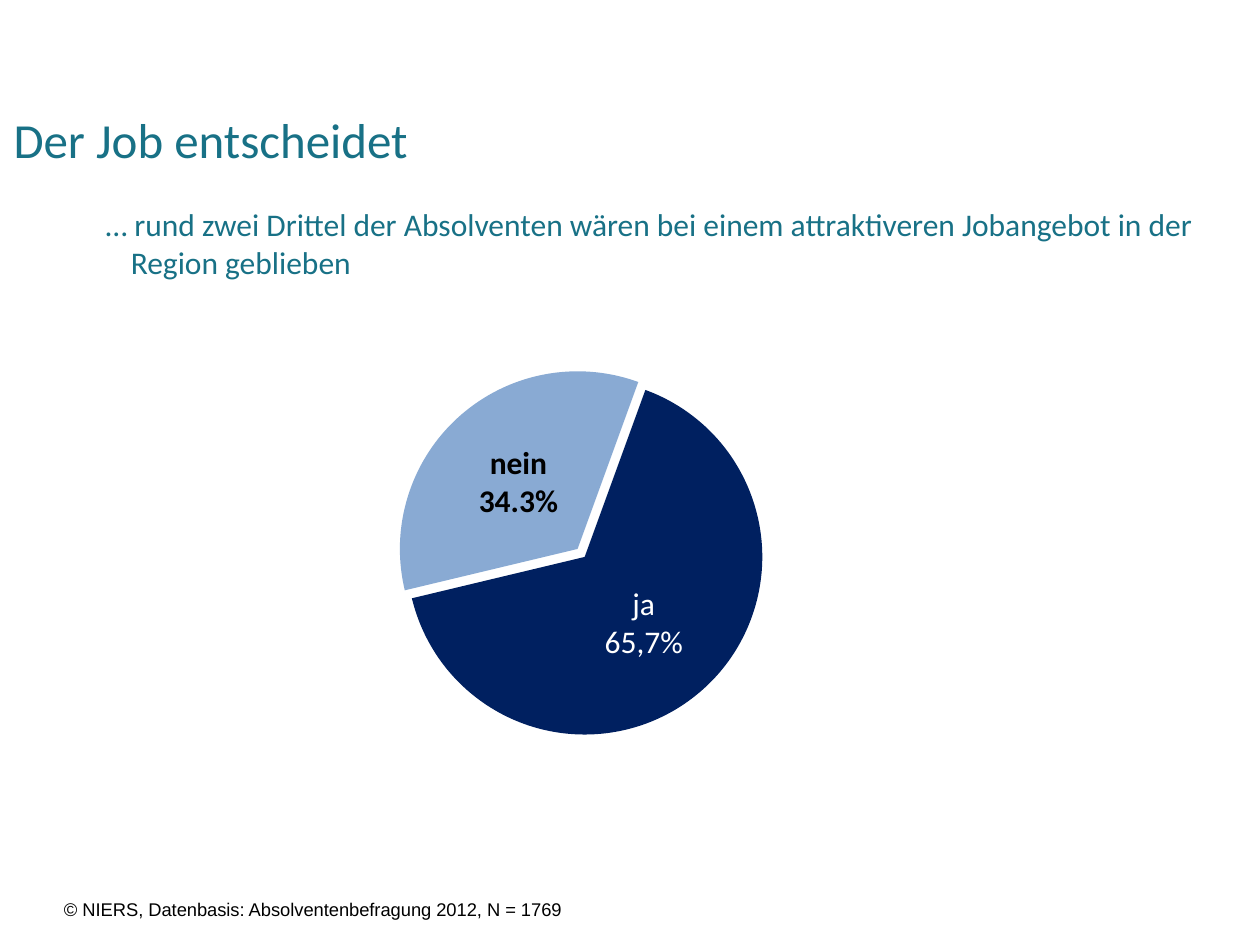
"""Build a slide with a pie chart on graduates who would have stayed in the region."""
import pptx
import pptx.chart.data
import pptx.dml.color
import pptx.enum.chart
import pptx.enum.text
import pptx.oxml
import pptx.oxml.ns
import pptx.util

THEME = {
    "teal": "187186", "black": "000000", "white": "FFFFFF",
    "heading": "Calibri", "source": "Arial",
    "title_size": 28, "body_size": 18, "source_size": 10.5,
}
WIDTH, HEIGHT = 10, 7.5

TEXTS = [
    {"words": "Der Job entscheidet", "box": (0.01, 0.82, 9.17, 0.7),
     "font": "heading", "size": "title_size", "color": "teal"},
    {"words": "… rund zwei Drittel der Absolventen wären bei einem attraktiveren "
              "Jobangebot in der Region geblieben",
     "box": (0.35, 1.58, 9.23, 1.0), "indent": (0.59, -0.2),
     "font": "heading", "size": "body_size", "color": "teal"},
    {"words": "© NIERS, Datenbasis: Absolventenbefragung 2012, N = 1769",
     "box": (0.41, 7.08, 6.54, 0.45),
     "font": "source", "size": "source_size", "color": "black"},
]
ANSWERS = [("ja", 65.7, "002060"), ("nein", 34.3, "89AAD3")]
YES_LABEL = ["ja", "65,7%"]
PIE_BOX = (1.99, 2.85, 5.44, 3.17)
PLOT_SHARE = {"x": 0.215, "y": 0, "w": 0.534, "h": 0.971}
START_ANGLE, EXPLOSION = 20, 3


def inches(box):
    return [pptx.util.Inches(length) for length in box]


def style(font, face, size, color, bold=False):
    font.name = THEME[face]
    font.size = pptx.util.Pt(THEME[size])
    font.bold = bold
    font.color.rgb = pptx.dml.color.RGBColor.from_string(THEME[color])


def chart_xml(tag, content="", value=None):
    attribute = "" if value is None else f' val="{value}"'
    namespace = pptx.oxml.ns.nsdecls("c")
    return pptx.oxml.parse_xml(f"<c:{tag} {namespace}{attribute}>{content}</c:{tag}>")


def add_text(slide, words, box, font, size, color, indent=None):
    frame = slide.shapes.add_textbox(*inches(box)).text_frame
    frame.word_wrap = True
    frame.vertical_anchor = pptx.enum.text.MSO_ANCHOR.TOP
    paragraph = frame.paragraphs[0]
    if indent:
        margin, hanging = inches(indent)
        properties = paragraph._p.get_or_add_pPr()
        properties.set("marL", str(margin))
        properties.set("indent", str(hanging))
    run = paragraph.add_run()
    run.text = words
    style(run.font, font, size, color)


def place_plot(chart):
    plot_area = chart._chartSpace.chart.plotArea
    for layout in plot_area.findall(pptx.oxml.ns.qn("c:layout")):
        plot_area.remove(layout)
    modes = '<c:layoutTarget val="inner"/><c:xMode val="edge"/><c:yMode val="edge"/>'
    shares = "".join(f'<c:{side} val="{share}"/>' for side, share in PLOT_SHARE.items())
    plot_area.insert(0, chart_xml("layout", f"<c:manualLayout>{modes}{shares}</c:manualLayout>"))


def label_slices(plot, series):
    labels = series.data_labels
    labels.show_percentage = True
    labels.show_category_name = True
    labels.show_value = False
    labels.number_format = "0.0%"
    labels.number_format_is_linked = False
    labels.position = pptx.enum.chart.XL_LABEL_POSITION.CENTER
    style(labels.font, "heading", "body_size", "black", bold=True)
    last_flag = labels._element.find(pptx.oxml.ns.qn("c:showPercent"))
    bubble_flag = labels._element.find(pptx.oxml.ns.qn("c:showBubbleSize"))
    (last_flag if bubble_flag is None else bubble_flag).addnext(chart_xml("separator", "\n"))

    yes = series.points[0].data_label
    frame = yes.text_frame
    for row, words in enumerate(YES_LABEL):
        paragraph = frame.add_paragraph() if row else frame.paragraphs[0]
        run = paragraph.add_run()
        run.text = words
        style(run.font, "heading", "body_size", "white")
    yes.position = pptx.enum.chart.XL_LABEL_POSITION.CENTER


def add_pie(slide):
    answers = pptx.chart.data.CategoryChartData()
    answers.categories = [name for name, _, _ in ANSWERS]
    answers.add_series("Series 1", [share for _, share, _ in ANSWERS])
    chart = slide.shapes.add_chart(
        pptx.enum.chart.XL_CHART_TYPE.PIE, *inches(PIE_BOX), answers).chart
    chart.has_legend = False
    chart.has_title = False
    style(chart.font, "heading", "body_size", "black")
    plot = chart.plots[0]
    plot.vary_by_categories = True
    series = plot.series[0]
    for index, (_, _, color) in enumerate(ANSWERS):
        wedge = series.points[index].format
        wedge.fill.solid()
        wedge.fill.fore_color.rgb = pptx.dml.color.RGBColor.from_string(color)
        wedge.line.fill.background()
    first_point = series._element.find(pptx.oxml.ns.qn("c:dPt"))
    first_point.addprevious(chart_xml("explosion", value=EXPLOSION))
    label_slices(plot, series)
    for angle in plot._element.findall(pptx.oxml.ns.qn("c:firstSliceAng")):
        plot._element.remove(angle)
    plot._element.append(chart_xml("firstSliceAng", value=START_ANGLE))
    place_plot(chart)


def main():
    deck = pptx.Presentation()
    deck.slide_width, deck.slide_height = inches((WIDTH, HEIGHT))
    slide = deck.slides.add_slide(deck.slide_layouts[6])
    *headings, source = TEXTS
    for heading in headings:
        add_text(slide, **heading)
    add_pie(slide)
    add_text(slide, **source)
    deck.save("out.pptx")


if __name__ == "__main__":
    main()
